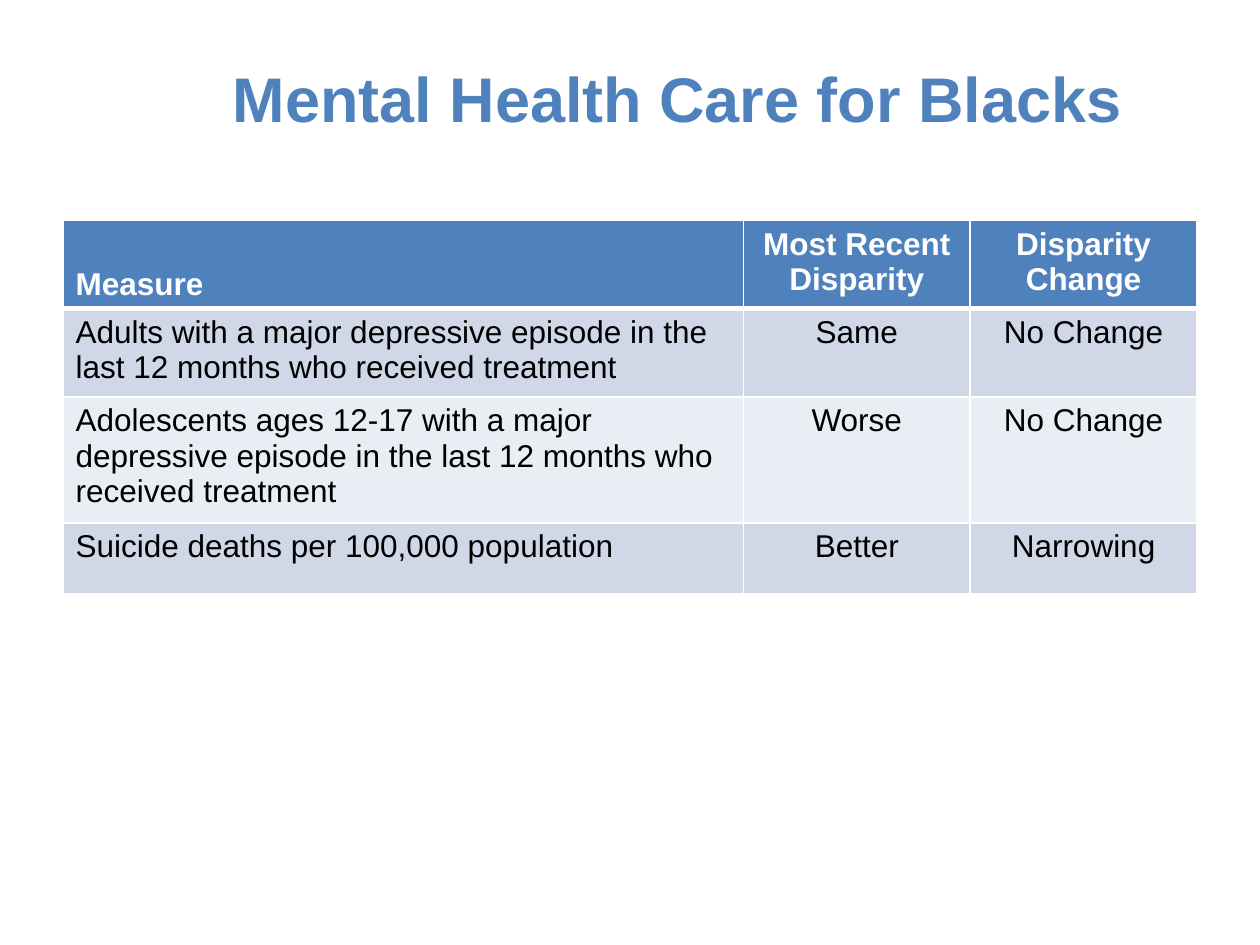
from typing import NamedTuple

from lxml.etree import SubElement
from pptx import Presentation
from pptx.dml.color import RGBColor
from pptx.enum.text import MSO_ANCHOR, PP_ALIGN
from pptx.oxml.ns import qn
from pptx.util import Inches, Pt

BLUE = RGBColor(0x4F, 0x81, 0xBD)
BAND_DARK = RGBColor(0xD0, 0xD8, 0xE8)
BAND_LIGHT = RGBColor(0xE9, 0xED, 0xF4)
WHITE = RGBColor(0xFF, 0xFF, 0xFF)
BLACK = RGBColor(0x00, 0x00, 0x00)


class MeasureRow(NamedTuple):
    measure: str
    disparity: str
    change: str
    height: float


ROWS = [
    MeasureRow("Measure", "Most Recent Disparity", "Disparity Change", 0.64),
    MeasureRow("Adults with a major depressive episode in the last 12 months "
               "who received treatment", "Same", "No Change", 0.64),
    MeasureRow("Adolescents ages 12-17 with a major depressive episode in the "
               "last 12 months who received treatment", "Worse", "No Change", 0.58),
    MeasureRow("Suicide deaths per 100,000 population", "Better", "Narrowing", 0.56),
]
COLUMN_WIDTHS = [5.4, 1.8, 1.8]

TITLE_FORMAT = {"name": "Arial", "size": Pt(36), "bold": True}
HEADER_FORMAT = {"name": "Arial", "size": Pt(18), "bold": True}
BODY_FORMAT = {"name": "Arial", "size": Pt(18), "bold": False}


def write(frame, text: str, font_format: dict, color: RGBColor, align) -> None:
    paragraph = frame.paragraphs[0]
    paragraph.alignment = align
    run = paragraph.add_run()
    run.text = text
    for attribute, value in font_format.items():
        setattr(run.font, attribute, value)
    run.font.color.rgb = color


def set_borders(cell, widths: dict[str, float]) -> None:
    properties = cell._tc.get_or_add_tcPr()
    for position, (side, width) in enumerate(widths.items()):
        line = properties.makeelement(qn(f"a:{side}"), {"w": str(Pt(width))})
        fill = SubElement(line, qn("a:solidFill"))
        SubElement(fill, qn("a:srgbClr"), val=str(WHITE))
        properties.insert(position, line)


def add_title(slide, text: str) -> None:
    title = slide.shapes.add_textbox(Inches(1.75), Inches(0.3), Inches(7.75), Inches(0.95))
    title.text_frame.word_wrap = True
    title.text_frame.vertical_anchor = MSO_ANCHOR.MIDDLE
    write(title.text_frame, text, TITLE_FORMAT, BLUE, PP_ALIGN.LEFT)


def add_measure_table(slide, rows: list[MeasureRow]) -> None:
    table = slide.shapes.add_table(
        len(rows), len(COLUMN_WIDTHS), Inches(0.5), Inches(1.75),
        Inches(sum(COLUMN_WIDTHS)), Inches(sum(row.height for row in rows))).table
    for column, width in zip(table.columns, COLUMN_WIDTHS):
        column.width = Inches(width)

    for r, row in enumerate(rows):
        table.rows[r].height = Inches(row.height)
        is_header = r == 0
        band = BLUE if is_header else BAND_DARK if r % 2 else BAND_LIGHT
        for c, text in enumerate(row[:3]):
            cell = table.cell(r, c)
            cell.fill.solid()
            cell.fill.fore_color.rgb = band
            # A thick rule separates the header from the body
            set_borders(cell, {"lnL": 1, "lnR": 1, "lnT": 3 if r == 1 else 1,
                               "lnB": 3 if is_header else 1})
            write(cell.text_frame, text, HEADER_FORMAT if is_header else BODY_FORMAT,
                  WHITE if is_header else BLACK,
                  PP_ALIGN.CENTER if c else PP_ALIGN.LEFT)
    table.cell(0, 0).vertical_anchor = MSO_ANCHOR.BOTTOM


def main() -> None:
    presentation = Presentation()
    presentation.slide_width = Inches(10)
    presentation.slide_height = Inches(7.5)
    slide = presentation.slides.add_slide(presentation.slide_layouts[6])
    add_title(slide, "Mental Health Care for Blacks")
    add_measure_table(slide, ROWS)
    presentation.save("out.pptx")


if __name__ == "__main__":
    main()
